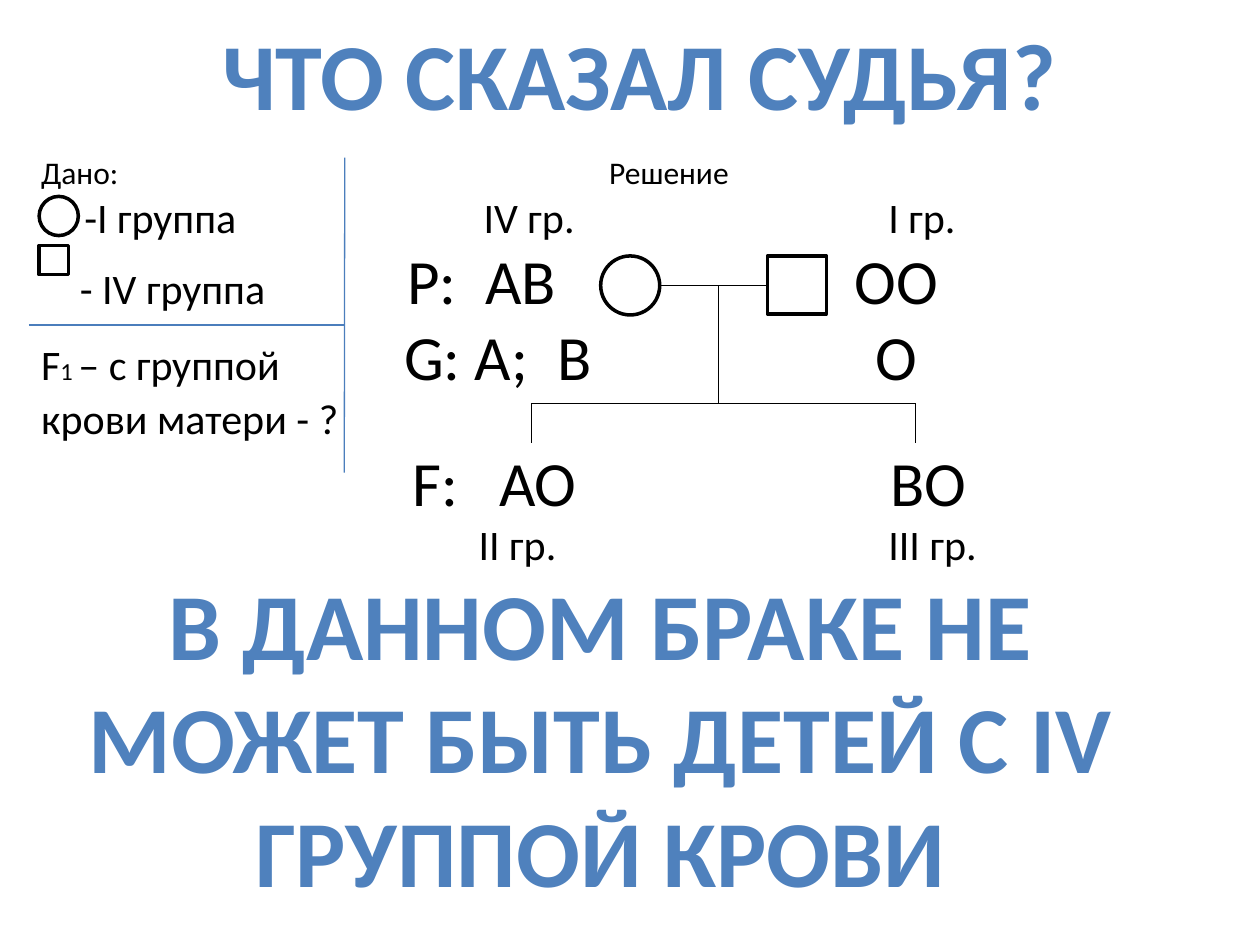
import pptx
import pptx.util
import pptx.dml.color
import pptx.enum.shapes
import pptx.enum.text
import pptx.oxml.ns
from lxml import etree

Cm, Pt = pptx.util.Cm, pptx.util.Pt
RGBColor = pptx.dml.color.RGBColor
SHAPES = pptx.enum.shapes.MSO_SHAPE
ALIGN = pptx.enum.text.PP_ALIGN
qn = pptx.oxml.ns.qn

BLACK = RGBColor(0x00, 0x00, 0x00)
WHITE = RGBColor(0xFF, 0xFF, 0xFF)
HEADING_BLUE = RGBColor(0x4F, 0x81, 0xBD)
DIVIDER_BLUE = RGBColor(0x4B, 0x7E, 0xBC)

QUESTION = ("ЧТО СКАЗАЛ СУДЬЯ?", (2.97, 0.2, 19.84, 2.57))
VERDICT = ("В ДАННОМ БРАКЕ НЕ МОЖЕТ БЫТЬ ДЕТЕЙ С IV ГРУППОЙ КРОВИ",
           (1.19, 11.28, 21.82, 7.19))

PROBLEM_BOX = (0.58, 2.97, 21.23, 8.71)
PROBLEM_LINES = [
    ([11.45], [("Дано:\tРешение", 18)]),
    ([0.87, 8.92, 17.08], [("\t-I группа\tIV гр.\tI гр.", 24)]),
    ([0.78, 7.38, 8.95, 16.4], [("\t- IV группа", 24), ("\tP:\tАВ\tОО", 36)]),
    ([7.32, 10.4, 16.83],
     [("F", 24), ("1 ", 14), ("– с группой", 24), ("\tG: А;\tВ\tО", 36)]),
    ([], [("крови матери - ?", 24)]),
    ([7.48, 9.24, 17.12], [("\tF:\tАО\tВО", 36)]),
    ([8.82, 17.08], [("\tII гр.\tIII гр.", 24)]),
]

WOMAN, MAN = SHAPES.OVAL, SHAPES.RECTANGLE
PEOPLE = [
    (WOMAN, (0.79, 3.96, 0.79, 0.79)),
    (MAN, (0.79, 4.95, 0.59, 0.59)),
    (WOMAN, (12.11, 5.16, 1.19, 1.19)),
    (MAN, (15.47, 5.16, 1.19, 1.17)),
]

MARRIAGE_Y, SIBLINGS_Y, CHILDREN_Y = 5.75, 8.13, 8.93
FIRST_CHILD_X, PARENTS_X, SECOND_CHILD_X = 10.71, 14.48, 18.45
DIVIDERS = [(0.58, 6.55, 6.94, 6.55), (6.95, 3.18, 6.94, 9.53)]
FAMILY_LINES = [
    (13.3, MARRIAGE_Y, 15.47, MARRIAGE_Y),
    (PARENTS_X, MARRIAGE_Y, PARENTS_X, SIBLINGS_Y),
    (FIRST_CHILD_X, SIBLINGS_Y, SECOND_CHILD_X, SIBLINGS_Y),
] + [(x, SIBLINGS_Y, x, CHILDREN_Y) for x in (FIRST_CHILD_X, SECOND_CHILD_X)]


def add_box(slide, place):
    frame = slide.shapes.add_textbox(*map(Cm, place)).text_frame
    frame.word_wrap = True
    frame.auto_size = pptx.enum.text.MSO_AUTO_SIZE.SHAPE_TO_FIT_TEXT
    return frame


def add_run(paragraph, text, size, color, bold=False):
    run = paragraph.add_run()
    run.text = text
    run.font.name = "Calibri"
    run.font.size = Pt(size)
    run.font.bold = bold
    run.font.color.rgb = color


def add_heading(slide, text, place):
    paragraph = add_box(slide, place).paragraphs[0]
    paragraph.alignment = ALIGN.CENTER
    add_run(paragraph, text, 54, HEADING_BLUE, bold=True)


def add_problem(slide):
    frame = add_box(slide, PROBLEM_BOX)
    for index, (stops, runs) in enumerate(PROBLEM_LINES):
        paragraph = frame.add_paragraph() if index else frame.paragraphs[0]
        paragraph.alignment = ALIGN.LEFT
        if stops:
            tabs = etree.SubElement(paragraph._p.get_or_add_pPr(), qn("a:tabLst"))
            for stop in stops:
                etree.SubElement(tabs, qn("a:tab"), pos=str(Cm(stop)), algn="l")
        for text, size in runs:
            add_run(paragraph, text, size, BLACK)


def add_person(slide, symbol, place):
    person = slide.shapes.add_shape(symbol, *map(Cm, place))
    person.shadow.inherit = False
    person.fill.solid()
    person.fill.fore_color.rgb = WHITE
    person.line.color.rgb = BLACK
    person.line.width = Pt(2)


def add_line(slide, ends, color):
    line = slide.shapes.add_connector(
        pptx.enum.shapes.MSO_CONNECTOR.STRAIGHT, *map(Cm, ends))
    line.line.color.rgb = color
    line.line.width = Pt(0.75)
    etree.SubElement(line._element.spPr, qn("a:effectLst"))


def main():
    deck = pptx.Presentation()
    deck.slide_width, deck.slide_height = Cm(25.4), Cm(19.05)
    slide = deck.slides.add_slide(deck.slide_layouts[6])
    add_heading(slide, *QUESTION)
    add_problem(slide)
    for symbol, place in PEOPLE:
        add_person(slide, symbol, place)
    for lines, color in ((DIVIDERS, DIVIDER_BLUE), (FAMILY_LINES, BLACK)):
        for ends in lines:
            add_line(slide, ends, color)
    add_heading(slide, *VERDICT)
    deck.save("out.pptx")


if __name__ == "__main__":
    main()
